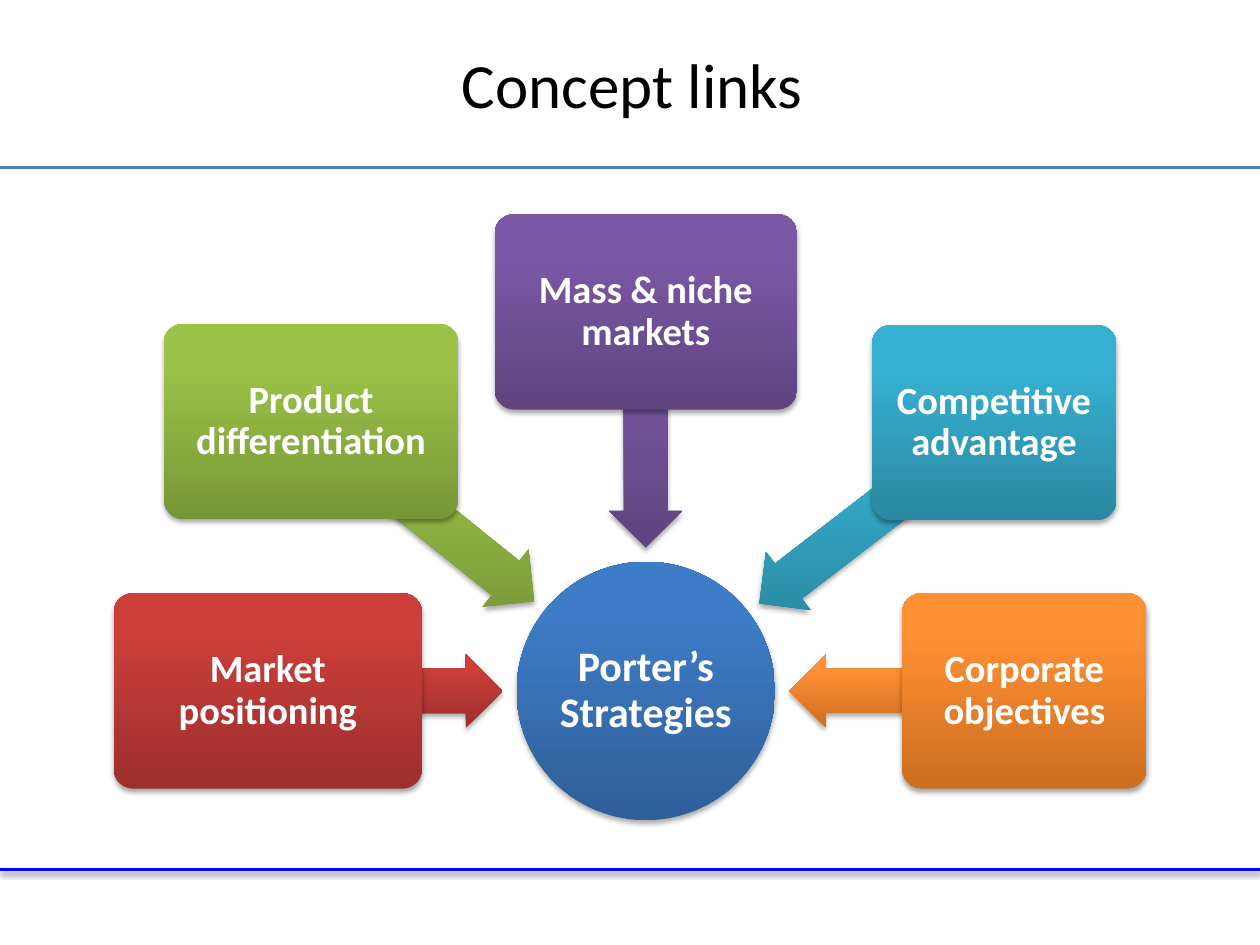
"""Build the concept links slide with five themes pointing at a hub."""
from math import atan2, degrees, hypot

from lxml.etree import SubElement
from pptx import Presentation
from pptx.dml.color import RGBColor
from pptx.enum.shapes import MSO_CONNECTOR, MSO_SHAPE
from pptx.enum.text import MSO_ANCHOR, PP_ALIGN
from pptx.oxml.ns import qn
from pptx.util import Cm, Pt

WHITE = RGBColor(0xFF, 0xFF, 0xFF)
BLACK = RGBColor(0x00, 0x00, 0x00)
STEEL = RGBColor(0x4B, 0x7E, 0xBC)
BLUE = RGBColor(0x00, 0x00, 0xFF)
HUB = RGBColor(0x2F, 0x5F, 0x99), RGBColor(0x3D, 0x7C, 0xC7)
RED = RGBColor(0x9C, 0x2F, 0x2D), RGBColor(0xCB, 0x3E, 0x3A)
GREEN = RGBColor(0x77, 0x97, 0x37), RGBColor(0x9B, 0xC3, 0x48)
PURPLE = RGBColor(0x5F, 0x44, 0x80), RGBColor(0x7B, 0x58, 0xA6)
TEAL = RGBColor(0x2A, 0x88, 0xA2), RGBColor(0x37, 0xB1, 0xD2)
ORANGE = RGBColor(0xCC, 0x6E, 0x20), RGBColor(0xFF, 0x90, 0x34)

WIDTH, HEIGHT = 25.4, 19.05
HUB_X, HUB_Y, HUB_SIZE = 13.02, 13.93, 5.21
BOX_H, ARROW_H, REACH = 3.94, 1.48, 2.89
THEMES = [
    ("Market positioning", 5.4, 13.93, 6.22, RED),
    ("Product differentiation", 6.27, 8.5, 5.94, GREEN),
    ("Mass & niche markets", 13.02, 6.29, 6.1, PURPLE),
    ("Competitive advantage", 20.04, 8.52, 4.93, TEAL),
    ("Corporate objectives", 20.65, 13.93, 4.93, ORANGE),
]


def write(shape, text, size=22, color=WHITE, bold=True, inset=0.13, space=0.9):
    frame = shape.text_frame
    frame.word_wrap = True
    frame.vertical_anchor = MSO_ANCHOR.MIDDLE
    frame.margin_left = frame.margin_right = Cm(inset)
    frame.margin_top = frame.margin_bottom = Cm(inset)
    frame.text = text
    para = frame.paragraphs[0]
    para.alignment = PP_ALIGN.CENTER
    para.line_spacing = space
    font = para.runs[0].font
    font.name, font.size, font.bold = "Calibri", Pt(size), bold
    font.color.rgb = color


def shade(shape, alpha=35, drop=1.8):
    effects = shape._element.spPr.find(qn("a:effectLst"))
    shadow = SubElement(effects, qn("a:outerShdw"), blurRad=str(Pt(3.1)),
                        dist=str(Pt(drop)), dir="5400000", rotWithShape="0")
    black = SubElement(shadow, qn("a:srgbClr"), val="000000")
    SubElement(black, qn("a:alpha"), val=str(alpha * 1000))


class Painter:
    """Holds the current slide and draws its parts in one style."""

    def __init__(self, slide):
        self.slide = slide

    def title(self, text):
        title = self.slide.shapes.title
        title.left, title.top = Cm(0.3), Cm(0.2)
        title.width, title.height = Cm(24.89), Cm(2.97)
        write(title, text, size=36, color=BLACK, bold=False, space=1)

    def rule(self, y, color, weight):
        line = self.slide.shapes.add_connector(
            MSO_CONNECTOR.STRAIGHT, Cm(0), Cm(y), Cm(WIDTH), Cm(y))
        line.line.color.rgb = color
        line.line.width = Pt(weight)
        SubElement(line._element.spPr, qn("a:effectLst"))
        return line

    def solid(self, kind, x, y, width, height, tones):
        shape = self.slide.shapes.add_shape(
            kind, Cm(x - width / 2), Cm(y - height / 2), Cm(width), Cm(height))
        shape.fill.gradient()
        shape.fill.gradient_angle = 90
        for stop, tone, place in zip(shape.fill.gradient_stops, tones, (0, 0.8)):
            stop.color.rgb = tone
            stop.position = place
        shape._element.spPr.find(qn("a:gradFill")).set("rotWithShape", "0")
        shape.line.fill.background()
        shape.shadow.inherit = False
        shade(shape)
        return shape

    def hub(self, text):
        shape = self.solid(MSO_SHAPE.OVAL, HUB_X, HUB_Y, HUB_SIZE, HUB_SIZE, HUB)
        write(shape, text, size=24, inset=0.05)

    def arrow(self, x, y, tones):
        dx, dy = x - HUB_X, y - HUB_Y
        span = hypot(dx, dy)
        middle = (span + REACH) / 2 / span
        shape = self.solid(MSO_SHAPE.LEFT_ARROW, HUB_X + dx * middle,
                           HUB_Y + dy * middle, span - REACH, ARROW_H, tones)
        shape.adjustments[0], shape.adjustments[1] = 0.6, 0.5
        shape.rotation = degrees(atan2(dy, dx)) % 360

    def box(self, text, x, y, width, tones):
        shape = self.solid(MSO_SHAPE.ROUNDED_RECTANGLE, x, y, width, BOX_H, tones)
        shape.adjustments[0] = 0.1
        write(shape, text)


def main():
    deck = Presentation()
    deck.slide_width, deck.slide_height = Cm(WIDTH), Cm(HEIGHT)
    paint = Painter(deck.slides.add_slide(deck.slide_layouts[5]))
    shade(paint.rule(17.53, BLUE, 2), alpha=38, drop=1.6)
    paint.rule(3.37, STEEL, 1.75)
    paint.title("Concept links")
    paint.hub("Porter’s Strategies")
    for text, x, y, width, tones in THEMES:
        paint.arrow(x, y, tones)
        paint.box(text, x, y, width, tones)
    deck.save("out.pptx")


if __name__ == "__main__":
    main()
